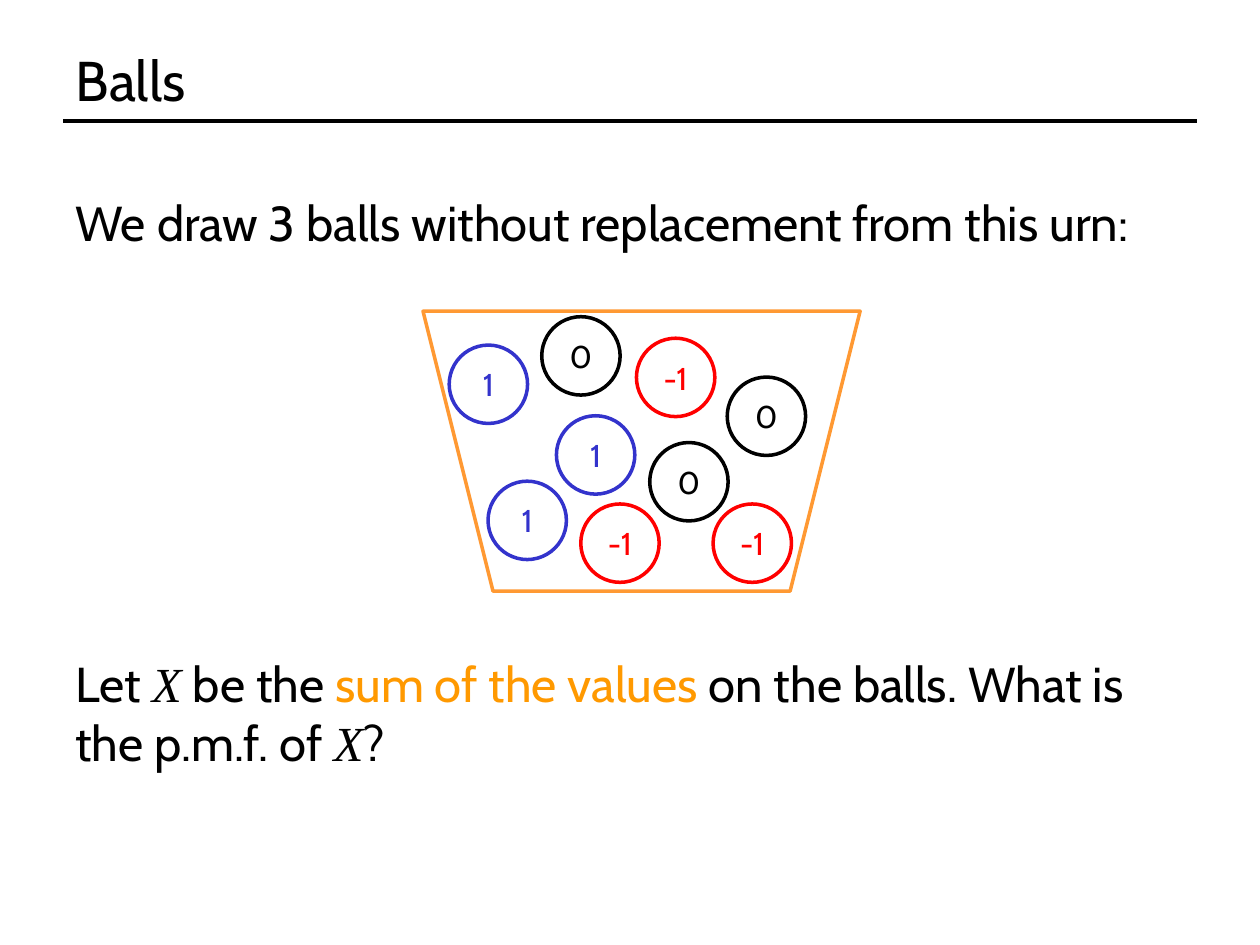
from lxml import etree
from pptx import Presentation
from pptx.dml.color import RGBColor
from pptx.enum import shapes, text
from pptx.oxml.ns import qn
from pptx.util import Pt

THEME = {
    "font": "Cabin", "math": "Times New Roman",
    "title": 32, "body": 28, "ball": 18, "line": 2,
    "black": "000000", "red": "FF0000", "blue": "3333CC",
    "urn": "FF9933", "accent": "FF9900",
}
LEFT, WIDTH = 36, 648
TITLE = [("Balls", "font", "black")]
INTRO = [("We draw 3 balls without replacement from this urn:", "font", "black")]
QUESTION = [
    ("Let ", "font", "black"),
    ("X", "math", "black"),
    (" be the ", "font", "black"),
    ("sum of the values", "font", "accent"),
    (" on the balls. What is the p.m.f. of ", "font", "black"),
    ("X", "math", "black"),
    ("?", "font", "black"),
]
URN = (241.7, 177.8, 249.8, 160)
BALL_SIZE = 44.8
BALL_COLORS = {"-1": "red", "0": "black", "1": "blue"}
BALLS = [
    ("-1", 331.9, 288), ("1", 256.7, 197.2), ("1", 278.9, 275),
    ("1", 318, 237.6), ("-1", 363.7, 193.3), ("-1", 407.5, 288),
    ("0", 415.6, 215.5), ("0", 371.3, 252.9), ("0", 309.6, 181),
]


def color(name):
    return RGBColor.from_string(THEME[name])


def write(shape, pieces, size, align=text.PP_ALIGN.LEFT):
    frame = shape.text_frame
    frame.word_wrap = True
    para = frame.paragraphs[0]
    para.alignment = align
    for words, face, tint in pieces:
        span = para.add_run()
        span.text = words
        span.font.name = THEME[face]
        span.font.italic = face == "math"
        span.font.size = Pt(THEME[size])
        span.font.color.rgb = color(tint)


def add_text(page, top, height, pieces):
    box = page.shapes.add_textbox(Pt(LEFT), Pt(top), Pt(WIDTH), Pt(height))
    write(box, pieces, "body")


def add_outline(page, kind, bounds, tint):
    shape = page.shapes.add_shape(kind, *map(Pt, bounds))
    shape.shadow.inherit = False
    shape.fill.background()
    shape.line.color.rgb = color(tint)
    shape.line.width = Pt(THEME["line"])
    return shape


def add_ball(page, value, left, top):
    tint = BALL_COLORS[value]
    bounds = (left, top, BALL_SIZE, BALL_SIZE)
    ball = add_outline(page, shapes.MSO_SHAPE.OVAL, bounds, tint)
    frame = ball.text_frame
    frame.margin_left = frame.margin_right = 0
    frame.vertical_anchor = text.MSO_ANCHOR.MIDDLE
    write(ball, [(value, "font", tint)], "ball", text.PP_ALIGN.CENTER)


def add_title(page):
    title = page.shapes.title
    title.left, title.top, title.width, title.height = map(Pt, (LEFT, 21.6, WIDTH, 47.5))
    title.text_frame.vertical_anchor = text.MSO_ANCHOR.MIDDLE
    title.text_frame.auto_size = text.MSO_AUTO_SIZE.NONE
    write(title, TITLE, "title")
    rule = page.shapes.add_connector(
        shapes.MSO_CONNECTOR.STRAIGHT, Pt(LEFT), Pt(69.3), Pt(LEFT + WIDTH), Pt(69.3))
    rule.line.color.rgb = color("black")
    rule.line.width = Pt(THEME["line"])
    etree.SubElement(rule.element.spPr, qn("a:effectLst"))


def main():
    deck = Presentation()
    deck.slide_width, deck.slide_height = Pt(720), Pt(540)
    page = deck.slides.add_slide(deck.slide_layouts[5])
    add_title(page)
    add_text(page, 106.6, 41, INTRO)
    urn = add_outline(page, shapes.MSO_SHAPE.TRAPEZOID, URN, "urn")
    urn.rotation = 180
    for value, left, top in BALLS:
        add_ball(page, value, left, top)
    add_text(page, 370.1, 75, QUESTION)
    deck.save("out.pptx")


if __name__ == "__main__":
    main()
